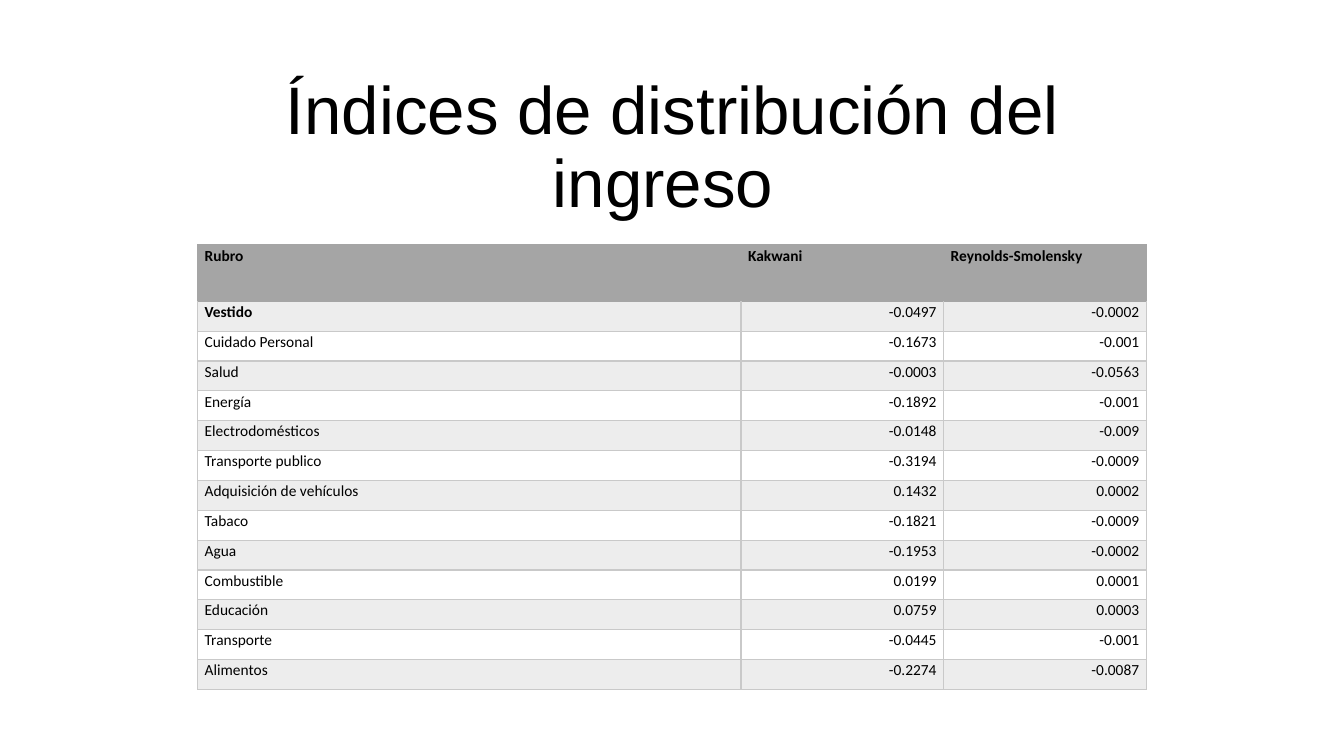
"""Build a slide with a table of income distribution indices."""
from dataclasses import dataclass

from lxml.etree import SubElement
from pptx import Presentation
from pptx.dml.color import RGBColor
from pptx.enum.text import MSO_ANCHOR as Anchor, PP_ALIGN as Align
from pptx.oxml.ns import qn
from pptx.slide import Slide
from pptx.table import _Cell as Cell
from pptx.text.text import _Paragraph as Paragraph
from pptx.util import Inches, Pt

BLACK = RGBColor(0x00, 0x00, 0x00)
HEADER_GRAY = RGBColor(0xA5, 0xA5, 0xA5)
BAND_GRAY = RGBColor(0xED, 0xED, 0xED)
BORDER_GRAY = RGBColor(0xC9, 0xC9, 0xC9)

TITLE = "Índices de distribución del ingreso "
COLUMN_WIDTHS = (5.39, 2.01, 2.01)
HEADER_HEIGHT = 0.56
TABLE_HEIGHT = 4.41


@dataclass(frozen=True)
class IndexRow:
    category: str
    kakwani: str
    reynolds: str

    def texts(self) -> tuple[str, str, str]:
        return self.category, self.kakwani, self.reynolds


HEADER = IndexRow("Rubro", "Kakwani", "Reynolds-Smolensky")
INDEX_ROWS = (
    IndexRow("Vestido", "-0.0497", "-0.0002"),
    IndexRow("Cuidado Personal", "-0.1673", "-0.001"),
    IndexRow("Salud", "-0.0003", "-0.0563"),
    IndexRow("Energía", "-0.1892", "-0.001"),
    IndexRow("Electrodomésticos", "-0.0148", "-0.009"),
    IndexRow("Transporte publico", "-0.3194", "-0.0009"),
    IndexRow("Adquisición de vehículos", "0.1432", "0.0002"),
    IndexRow("Tabaco", "-0.1821", "-0.0009"),
    IndexRow("Agua", "-0.1953", "-0.0002"),
    IndexRow("Combustible", "0.0199", "0.0001"),
    IndexRow("Educación", "0.0759", "0.0003"),
    IndexRow("Transporte", "-0.0445", "-0.001"),
    IndexRow("Alimentos", "-0.2274", "-0.0087"),
)


def add_run(paragraph: Paragraph, text: str, font_name: str, size: int, bold: bool = False) -> None:
    run = paragraph.add_run()
    run.text = text
    run.font.name = font_name
    run.font.size = Pt(size)
    run.font.bold = bold
    run.font.color.rgb = BLACK


def add_title(slide: Slide) -> None:
    shape = slide.shapes.add_textbox(Inches(1.67), Inches(0.66), Inches(10), Inches(1.59))
    frame = shape.text_frame
    frame.word_wrap = True
    frame.vertical_anchor = Anchor.BOTTOM
    paragraph = frame.paragraphs[0]
    paragraph.alignment = Align.CENTER
    paragraph.line_spacing = 0.9
    add_run(paragraph, TITLE, "Arial", 48)


def set_borders(cell: Cell, color: RGBColor, top_color: RGBColor) -> None:
    properties = cell._tc.get_or_add_tcPr()
    for side, side_color in (("L", color), ("R", color), ("T", top_color), ("B", color)):
        line = SubElement(properties, qn(f"a:ln{side}"), w=str(Pt(1)))
        fill = SubElement(line, qn("a:solidFill"))
        SubElement(fill, qn("a:srgbClr"), val=str(side_color))


def fill_cell(cell: Cell, text: str, row: int, column: int) -> None:
    is_header = row == 0
    set_borders(cell, HEADER_GRAY if is_header else BORDER_GRAY, HEADER_GRAY if row <= 1 else BORDER_GRAY)
    if is_header or row % 2:
        cell.fill.solid()
        cell.fill.fore_color.rgb = HEADER_GRAY if is_header else BAND_GRAY
    else:
        cell.fill.background()
    cell.margin_left = cell.margin_right = Inches(0.07)
    cell.margin_top = cell.margin_bottom = Inches(0)
    paragraph = cell.text_frame.paragraphs[0]
    paragraph.alignment = Align.LEFT if is_header or column == 0 else Align.RIGHT
    paragraph.line_spacing = 1.07
    paragraph.space_after = Pt(8)
    add_run(paragraph, text, "Calibri", 11, is_header or (row == 1 and column == 0))


def add_index_table(slide: Slide) -> None:
    rows = (HEADER, *INDEX_ROWS)
    table = slide.shapes.add_table(
        len(rows), len(COLUMN_WIDTHS),
        Inches(1.96), Inches(2.43), Inches(sum(COLUMN_WIDTHS)), Inches(TABLE_HEIGHT),
    ).table
    table.first_row = table.horz_banding = False
    for column, width in zip(table.columns, COLUMN_WIDTHS):
        column.width = Inches(width)
    body_height = (TABLE_HEIGHT - HEADER_HEIGHT) / len(INDEX_ROWS)
    for row, index_row in enumerate(rows):
        table.rows[row].height = Inches(body_height if row else HEADER_HEIGHT)
        for column, text in enumerate(index_row.texts()):
            fill_cell(table.cell(row, column), text, row, column)


def main() -> None:
    presentation = Presentation()
    presentation.slide_width = Inches(13.33)
    presentation.slide_height = Inches(7.5)
    slide = presentation.slides.add_slide(presentation.slide_layouts[6])
    add_title(slide)
    add_index_table(slide)
    presentation.save("out.pptx")


if __name__ == "__main__":
    main()
